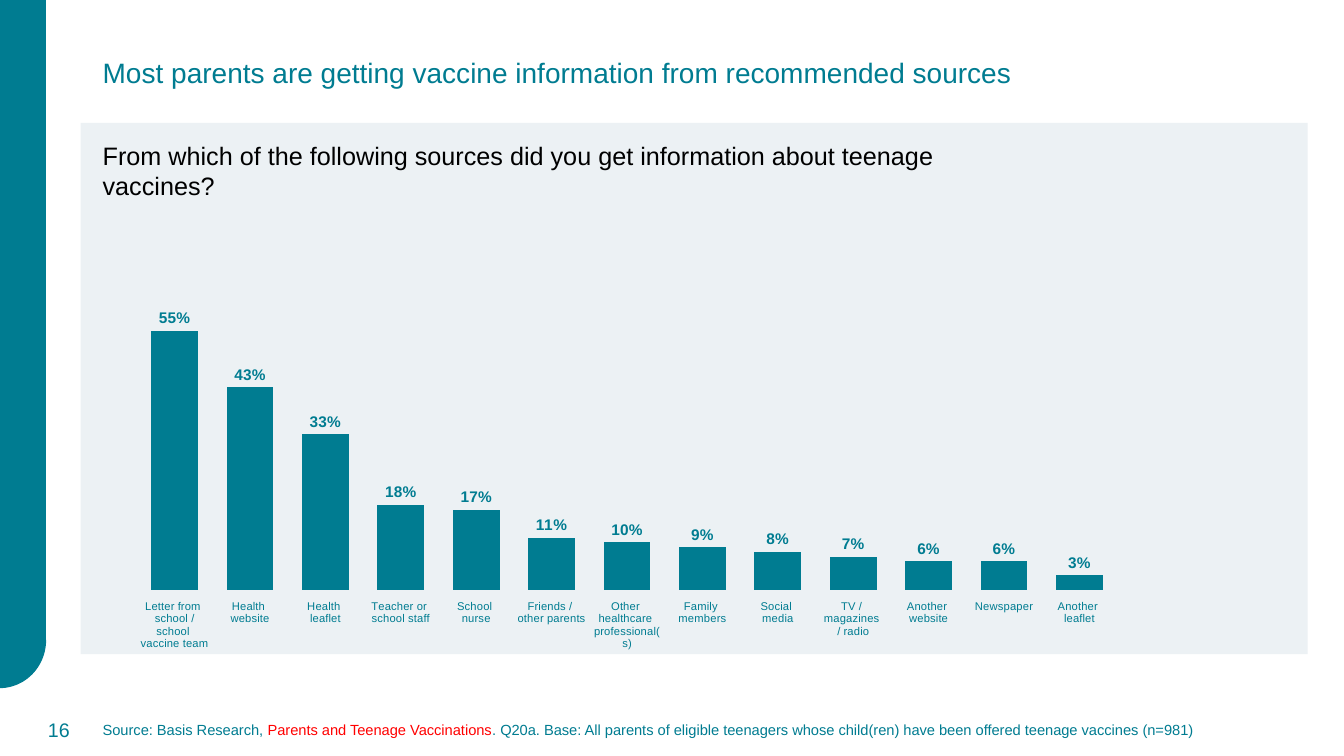
from lxml import etree
from pptx import Presentation
from pptx import util as u
from pptx.chart.data import CategoryChartData
from pptx.dml.color import RGBColor
from pptx.enum import chart as charts, shapes, text
from pptx.oxml.ns import qn

WIDTH, HEIGHT = 13.33, 7.5
FONT = "Arial"
COLOURS = {"teal": "007C91", "panel": "ECF1F4", "red": "FF0000", "black": "000000"}
SOURCES = [
    ("Letter from \nschool / school \nvaccine team", 0.55),
    ("Health \nwebsite", 0.43),
    ("Health \nleaflet", 0.33),
    ("Teacher or \nschool staff", 0.18),
    ("School \nnurse", 0.17),
    ("Friends / \nother parents", 0.11),
    ("Other \nhealthcare \nprofessional(s)", 0.1),
    ("Family \nmembers", 0.09),
    ("Social \nmedia", 0.08),
    ("TV / \nmagazines \n/ radio", 0.07),
    ("Another \nwebsite", 0.06),
    ("Newspaper", 0.06),
    ("Another \nleaflet", 0.03),
]


def colour(name):
    return RGBColor.from_string(COLOURS[name])


def area(left, top, width, height):
    """Turn percentages of the slide's size into lengths."""
    return (u.Inches(WIDTH * left / 100), u.Inches(HEIGHT * top / 100),
            u.Inches(WIDTH * width / 100), u.Inches(HEIGHT * height / 100))


def set_font(font, size, name="teal", bold=False):
    font.name = FONT
    font.size = u.Pt(size)
    font.bold = bold
    font.color.rgb = colour(name)


def add_block(page, kind, place, fill, outlined=False):
    block = page.shapes.add_shape(kind, *area(*place))
    block.shadow.inherit = False
    block.fill.solid()
    block.fill.fore_color.rgb = colour(fill)
    if outlined:
        block.line.color.rgb = colour(fill)
        block.line.width = u.Pt(1)
    else:
        block.line.fill.background()
    return block


def add_text(page, place, spans, size, align=text.PP_ALIGN.LEFT,
             anchor=text.MSO_ANCHOR.MIDDLE, spacing=1.0):
    frame = page.shapes.add_textbox(*area(*place)).text_frame
    frame.word_wrap = True
    frame.vertical_anchor = anchor
    para = frame.paragraphs[0]
    para.alignment = align
    para.line_spacing = spacing
    for words, name in spans:
        span = para.add_run()
        span.text = words
        set_font(span.font, size, name)


def set_plot_layout(chart, **shares):
    plot_area = chart.plots[0]._element.getparent()
    layout = plot_area.find(qn("c:layout"))
    if layout is None:
        layout = etree.Element(qn("c:layout"))
        plot_area.insert(0, layout)
    manual = etree.SubElement(layout, qn("c:manualLayout"))
    settings = {"layoutTarget": "inner", "xMode": "edge", "yMode": "edge", **shares}
    for tag, value in settings.items():
        etree.SubElement(manual, qn(f"c:{tag}")).set("val", str(value))


def add_source_chart(page, place):
    data = CategoryChartData(number_format="0%")
    data.categories = [label for label, share in SOURCES]
    data.add_series("Series 1", [share for label, share in SOURCES])
    chart = page.shapes.add_chart(
        charts.XL_CHART_TYPE.COLUMN_CLUSTERED, *area(*place), data).chart
    set_font(chart.font, 10, "black")
    chart.has_legend = False
    chart.has_title = False
    set_plot_layout(chart, x=0.01, y=0, w=0.98, h=0.84)

    shares = chart.value_axis
    shares.minimum_scale, shares.maximum_scale = 0, 1
    shares.has_major_gridlines = False
    shares.tick_labels.number_format = "0%"
    shares.tick_labels.number_format_is_linked = False
    shares.visible = False
    labels = chart.category_axis
    labels.format.line.fill.background()
    set_font(labels.tick_labels.font, 8)

    plot = chart.plots[0]
    plot.gap_width = 61
    plot.vary_by_categories = False
    columns = plot.series[0]
    columns.format.fill.solid()
    columns.format.fill.fore_color.rgb = colour("teal")
    values = columns.data_labels
    values.show_value = True
    values.number_format = "0%"
    values.number_format_is_linked = False
    values.position = charts.XL_LABEL_POSITION.OUTSIDE_END
    set_font(values.font, 11, bold=True)


def main():
    deck = Presentation()
    deck.slide_width, deck.slide_height = u.Inches(WIDTH), u.Inches(HEIGHT)
    page = deck.slides.add_slide(deck.slide_layouts[6])
    kinds = shapes.MSO_SHAPE

    add_block(page, kinds.RECTANGLE, (0, 0, 3.38, 84.67), "teal", outlined=True)
    corner = add_block(page, kinds.PIE, (-3.45, 78.4, 6.83, 12.53), "teal", outlined=True)
    corner.rotation = 180
    corner.adjustments[0], corner.adjustments[1] = 108, 162
    add_block(page, kinds.RECTANGLE, (6, 16.27, 91.3, 70.27), "panel")
    add_source_chart(page, (9.45, 15.73, 74.42, 74.13))

    add_text(page, (6.9, 0.13, 86.27, 19.33), [
        ("Most parents are getting vaccine information from recommended sources", "teal"),
    ], 20, spacing=0.9)
    add_text(page, (6.9, 93.87, 87.02, 5.33), [
        ("Source: Basis Research, ", "teal"),
        ("Parents and Teenage Vaccinations", "red"),
        (". Q20a. Base: All parents of eligible teenagers whose child(ren) "
         "have been offered teenage vaccines (n=981)", "teal"),
    ], 10.5)
    add_text(page, (1.05, 93.87, 4.88, 5.33), [("16", "teal")], 14,
             align=text.PP_ALIGN.RIGHT)
    add_text(page, (6.9, 17.87, 67.82, 9.47), [
        ("From which of the following sources did you get information "
         "about teenage vaccines?", "black"),
    ], 18, anchor=text.MSO_ANCHOR.TOP)

    deck.save("out.pptx")


if __name__ == "__main__":
    main()
